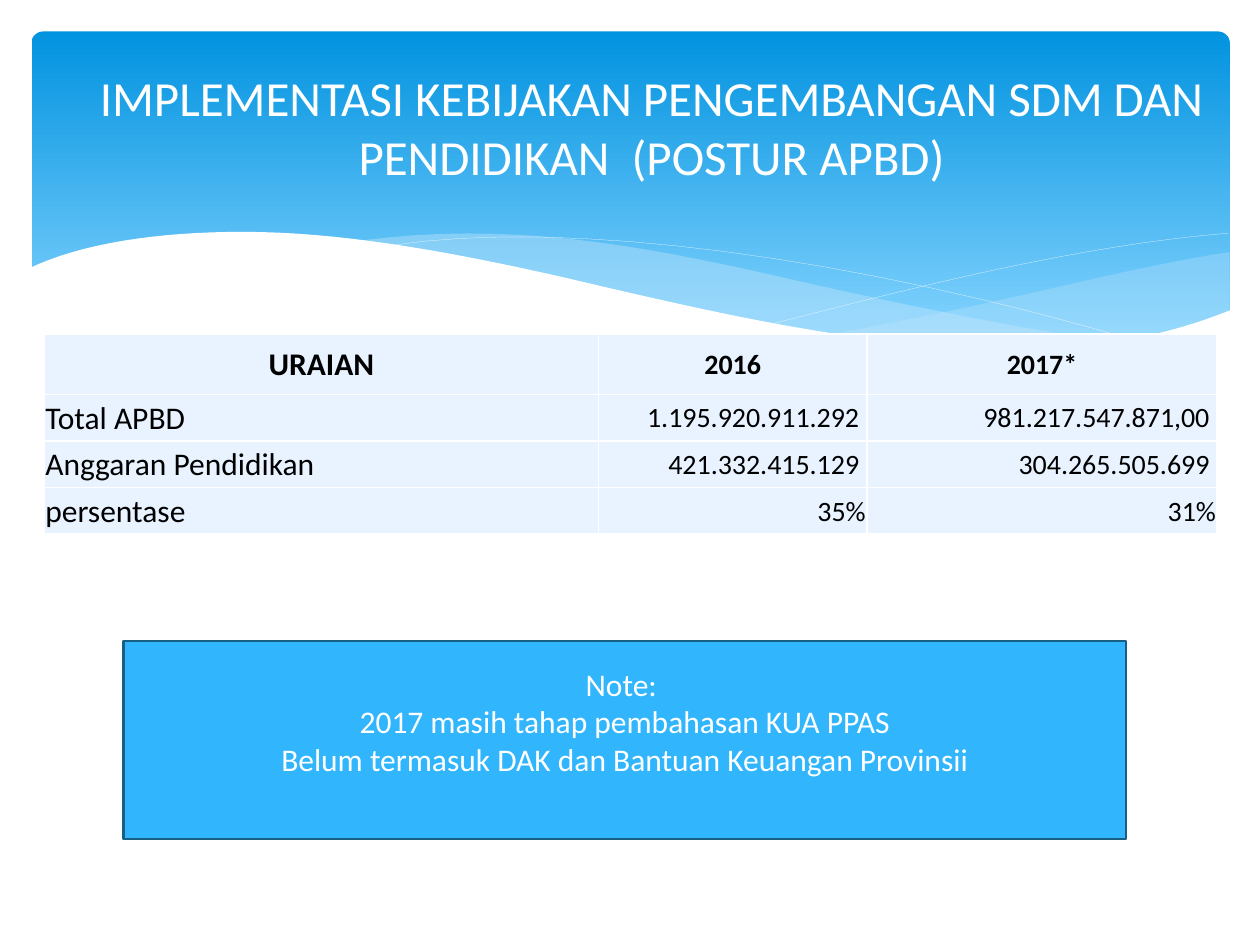
"""Build the education budget slide with its wave header, table and note."""
from pptx import Presentation
from pptx.dml.color import RGBColor
from pptx.enum.shapes import MSO_SHAPE as Shape
from pptx.enum.text import MSO_ANCHOR as Anchor, MSO_AUTO_SIZE as AutoSize, PP_ALIGN as Align
from pptx.oxml import parse_xml
from pptx.oxml.ns import nsdecls
from pptx.util import Inches, Pt

WHITE, BLACK, PALE, MIST = "FFFFFF", "000000", "E8F3FF", "C6E7FC"
CURVE_STEPS = 16
color = RGBColor.from_string


def write_text(frame, text, size=18, ink=WHITE, bold=False, align=Align.CENTER):
    """Fill a text frame, one paragraph per line of text."""
    frame.text = text
    frame.word_wrap = True
    frame.vertical_anchor = Anchor.MIDDLE
    for paragraph in frame.paragraphs:
        paragraph.alignment = align
        font = paragraph.runs[0].font
        font.name, font.size, font.bold = "Calibri", Pt(size), bold
        font.color.rgb = color(ink)


def trace_curve(controls):
    """Return points along joined cubic Bezier curves: anchor, two handles, anchor, and so on."""
    points = [controls[0]]
    for first in range(0, len(controls) - 1, 3):
        for step in range(1, CURVE_STEPS + 1):
            t = step / CURVE_STEPS
            weights = [(1 - t) ** 3, 3 * t * (1 - t) ** 2, 3 * t ** 2 * (1 - t), t ** 3]
            segment = zip(*controls[first:first + 4])
            points.append(tuple(sum(w * value for w, value in zip(weights, axis)) for axis in segment))
    return [(Inches(x), Inches(y)) for x, y in points]


presentation = Presentation()
presentation.slide_width, presentation.slide_height = Inches(10), Inches(7.5)
slide = presentation.slides.add_slide(presentation.slide_layouts[5])
shapes = slide.shapes

band = shapes.add_shape(Shape.ROUNDED_RECTANGLE, Inches(0.25), Inches(0.25), Inches(9.51), Inches(2.7))
band.adjustments[0] = 0.034
band.shadow.inherit = False
band.line.fill.background()
band.fill.gradient()
band.fill.gradient_angle = 270
for stop, (position, shade) in zip(band.fill.gradient_stops, [(0, "0293E0"), (0.9, "83D3FE")]):
    stop.position = position
    stop.color.rgb = color(shade)

right_wave = [(9.76, 2), (8.9, 2.13), (8, 2.4), (6.61, 2.65),
              (7.65, 2.8), (8.8, 2.87), (9.76, 2.47)]
middle_wave = [(8.93, 2.73), (8.05, 2.6), (7.17, 2.42), (6.29, 2.22),
               (5, 1.92), (4, 1.76), (2.86, 1.91),
               (3.4, 1.98), (3.95, 2.09), (4.49, 2.22),
               (6.3, 2.64), (7.6, 2.87), (8.93, 2.73)]
white_wave = [(0.23, 2.13), (0.65, 1.93), (1.25, 1.84), (1.93, 1.84),
              (2.67, 1.84), (3.5, 1.98), (4.47, 2.2),
              (5.7, 2.49), (6.9, 2.77), (8.09, 2.77),
              (8.7, 2.77), (9.25, 2.67), (9.77, 2.46)]
white_corners = [(Inches(9.77), Inches(3.29)), (Inches(0.23), Inches(3.29))]
falling_line = [(3.09, 1.95), (4.5, 1.73), (6.8, 2.04), (9.07, 2.72)]
rising_line = [(6.13, 2.57), (7.3, 2.27), (8.55, 1.95), (9.75, 1.85)]

header_outlines = [
    (trace_curve(right_wave), MIST, 29),
    (trace_curve(middle_wave), MIST, 40),
    (trace_curve(falling_line), None, None),
    (trace_curve(rising_line), None, None),
    (trace_curve(white_wave) + white_corners, WHITE, 100),
]
for points, shade, opacity in header_outlines:
    builder = shapes.build_freeform(*points[0], scale=1.0)
    builder.add_line_segments(points[1:], close=shade is not None)
    wave = builder.convert_to_shape()
    wave.shadow.inherit = False
    if shade:
        wave.line.fill.background()
        wave.fill.solid()
        wave.fill.fore_color.rgb = color(shade)
        fill_color = wave.element.spPr.xpath("a:solidFill/a:srgbClr")[0]
        fill_color.append(parse_xml(f'<a:alpha {nsdecls("a")} val="{opacity * 1000}"/>'))
    else:
        wave.fill.background()
        wave.line.color.rgb = color(WHITE)
        wave.line.width = Pt(0.1)

title = shapes.title
title.left, title.top, title.width, title.height = Inches(0.67), Inches(0.32), Inches(9), Inches(1.37)
write_text(title.text_frame, "IMPLEMENTASI KEBIJAKAN PENGEMBANGAN SDM DAN PENDIDIKAN  (POSTUR APBD)", size=28)
title.text_frame.auto_size = AutoSize.NONE
title.element.getparent().append(title.element)

budget = [
    ["URAIAN", "2016", "2017*"],
    ["Total APBD", "1.195.920.911.292 ", "981.217.547.871,00 "],
    ["Anggaran Pendidikan", "421.332.415.129 ", "304.265.505.699 "],
    ["persentase", "35%", "31%"],
]
column_widths = [4.4, 2.13, 2.78]
table = shapes.add_table(len(budget), len(column_widths), Inches(0.35), Inches(2.65),
                         Inches(9.31), Inches(1.58)).table
table.first_row = table.horz_banding = False
for column, width in zip(table.columns, column_widths):
    column.width = Inches(width)
for row_index, (row, values) in enumerate(zip(table.rows, budget)):
    is_header = row_index == 0
    row.height = Inches(0.48 if is_header else 0.37)
    for column_index, (cell, value) in enumerate(zip(row.cells, values)):
        is_label = column_index == 0
        body_align = Align.LEFT if is_label else Align.RIGHT
        write_text(cell.text_frame, value, size=18 if is_label else 16, ink=BLACK, bold=is_header,
                   align=Align.CENTER if is_header else body_align)
        cell.vertical_anchor = Anchor.MIDDLE
        cell.margin_left = cell.margin_right = cell.margin_top = Inches(0.01)
        cell.margin_bottom = 0
        cell.fill.solid()
        cell.fill.fore_color.rgb = color(PALE)
        properties = cell._tc.get_or_add_tcPr()
        for index, side in enumerate(["lnL", "lnR", "lnT", "lnB"]):
            properties.insert(index, parse_xml(
                f'<a:{side} {nsdecls("a")} w="{Pt(1)}"><a:solidFill><a:srgbClr val="{WHITE}"/>'
                f'</a:solidFill></a:{side}>'))

note = shapes.add_shape(Shape.RECTANGLE, Inches(0.98), Inches(5.09), Inches(7.96), Inches(1.57))
note.shadow.inherit = False
note.fill.solid()
note.fill.fore_color.rgb = color("31B6FD")
note.line.color.rgb = color("195F84")
note.line.width = Pt(1.25)
write_text(note.text_frame,
           "Note: \n2017 masih tahap pembahasan KUA PPAS\nBelum termasuk DAK dan Bantuan Keuangan Provinsii")
note.text_frame.margin_bottom = Inches(0.35)

presentation.save("out.pptx")
